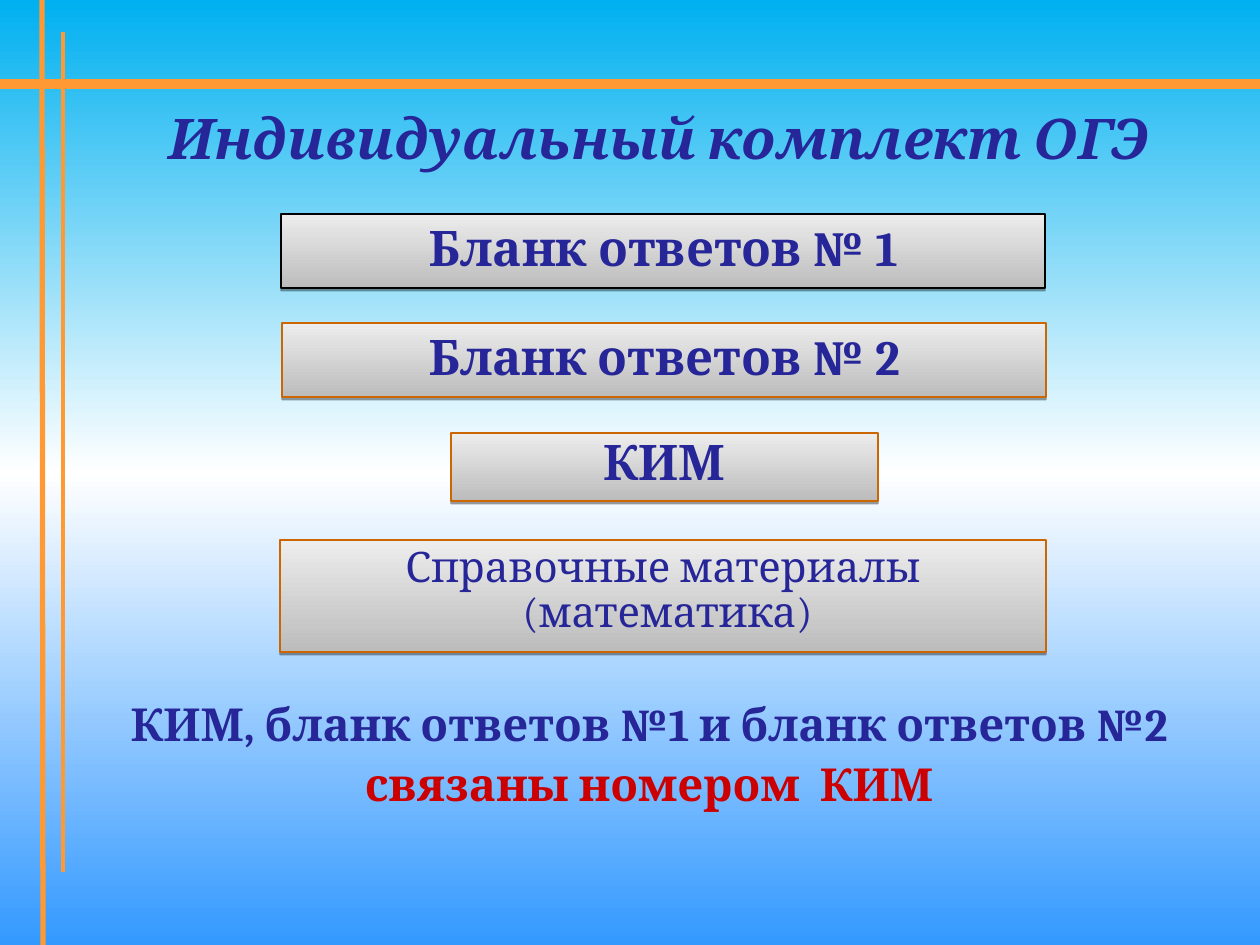
from copy import deepcopy
from lxml import etree
from pptx import Presentation, util as u
from pptx.dml.color import RGBColor
from pptx.enum import shapes, text
from pptx.oxml import parse_xml
from pptx.oxml.ns import nsdecls, qn

PX = 914400 / 126
FONT = "Cambria"
HUE = {
    "sky": "00B0F0", "white": "FFFFFF", "blue": "3399FF",
    "bar": "FF9933", "navy": "262699", "red": "CC0000",
    "dark": "BCBCBC", "light": "EDEDED", "rust": "CC6600", "black": "000000",
}
SHADE = (
    f'<a:outerShdw {nsdecls("a")} blurRad="0" dist="20320" dir="5400000" rotWithShape="0">'
    f'<a:srgbClr val="{HUE["black"]}"><a:alpha val="38000"/></a:srgbClr></a:outerShdw>'
)


def emu(*px):
    return [u.Emu(round(n * PX)) for n in px]


def rgb(name):
    return RGBColor.from_string(HUE[name])


def place(shape, box):
    shape.left, shape.top, shape.width, shape.height = emu(*box)


def blend(fill, angle, names):
    fill.gradient()
    fill.gradient_angle = angle
    for stop, name in zip(fill.gradient_stops, names):
        stop.color.rgb = rgb(name)


def write(shape, lines, size, bold=True, italic=False, gap=0, lead=None,
          anchor=text.MSO_ANCHOR.TOP, pad=6):
    frame = shape.text_frame
    frame.word_wrap = True
    frame.auto_size = text.MSO_AUTO_SIZE.NONE
    frame.vertical_anchor = anchor
    frame.margin_left, frame.margin_right = emu(13, 13)
    frame.margin_top, frame.margin_bottom = emu(pad, pad)
    for i, (line, hue) in enumerate(lines):
        para = frame.add_paragraph() if i else frame.paragraphs[0]
        para.text = line
        para.alignment = text.PP_ALIGN.CENTER
        para.space_before = u.Pt(gap if i else 0)
        if lead:
            para.line_spacing = lead
        font = para.font
        font.name, font.size, font.bold, font.italic = FONT, u.Pt(size), bold, italic
        font.color.rgb = rgb(hue)


def backdrop(slide):
    fill = slide.background.fill
    blend(fill, 270, ("sky", "blue"))
    first = slide.element.find(".//" + qn("a:gs"))
    first.addnext(deepcopy(first))
    mid = fill.gradient_stops[1]
    mid.position = 0.5
    mid.color.rgb = rgb("white")


def bars(slide):
    for ends, width in (((0, 84, 1260, 84), 6),
                        ((42, 0, 43, 945), 3),
                        ((63, 32, 63, 872), 2.25)):
        bar = slide.shapes.add_connector(shapes.MSO_CONNECTOR.STRAIGHT, *emu(*ends))
        bar.line.color.rgb = rgb("bar")
        bar.line.width = u.Pt(width)
        etree.SubElement(bar.element.spPr, qn("a:effectLst"))


def title(slide, box):
    shape = slide.shapes.title
    place(shape, box)
    write(shape, [("Индивидуальный комплект ОГЭ", "navy")], 32, italic=True,
          anchor=text.MSO_ANCHOR.MIDDLE)


def panel(slide, box, lines, size, edge="rust", lead=0.9, bold=True):
    shape = slide.shapes.add_shape(shapes.MSO_SHAPE.RECTANGLE, *emu(*box))
    blend(shape.fill, 90, ("dark", "light"))
    shape.line.color.rgb = rgb(edge)
    shape.line.width = u.Pt(0.75)
    shape.shadow.inherit = False
    shape.element.spPr.find(qn("a:effectLst")).append(parse_xml(SHADE))
    write(shape, [(line, "navy") for line in lines], size, bold, gap=3, lead=lead, pad=10)


def closing(slide, box):
    shape = slide.placeholders[1]
    place(shape, box)
    write(shape, [("КИМ, бланк ответов №1 и бланк ответов №2", "navy"),
                  ("связаны номером  КИМ", "red")], 26, gap=3)
    for para in shape.text_frame.paragraphs:
        props = para._p.get_or_add_pPr()
        props.set("marL", "0")
        props.set("indent", "0")
        mark = etree.Element(qn("a:buNone"))
        props.find(qn("a:defRPr")).addprevious(mark)


def main():
    deck = Presentation()
    deck.slide_width, deck.slide_height = emu(1260, 945)
    slide = deck.slides.add_slide(deck.slide_layouts[1])
    backdrop(slide)
    bars(slide)
    title(slide, (72, 92, 1174, 91))
    panel(slide, (281, 214, 764, 74), ["Бланк ответов № 1"], 28, edge="black")
    panel(slide, (282, 323, 764, 74), ["Бланк ответов № 2"], 28)
    panel(slide, (451, 433, 427, 68), ["КИМ"], 28, lead=0.8)
    panel(slide, (280, 540, 766, 112), ["Справочные материалы", " (математика)"], 24,
          lead=0.8, bold=False)
    closing(slide, (94, 690, 1111, 136))
    deck.save("out.pptx")


if __name__ == "__main__":
    main()
